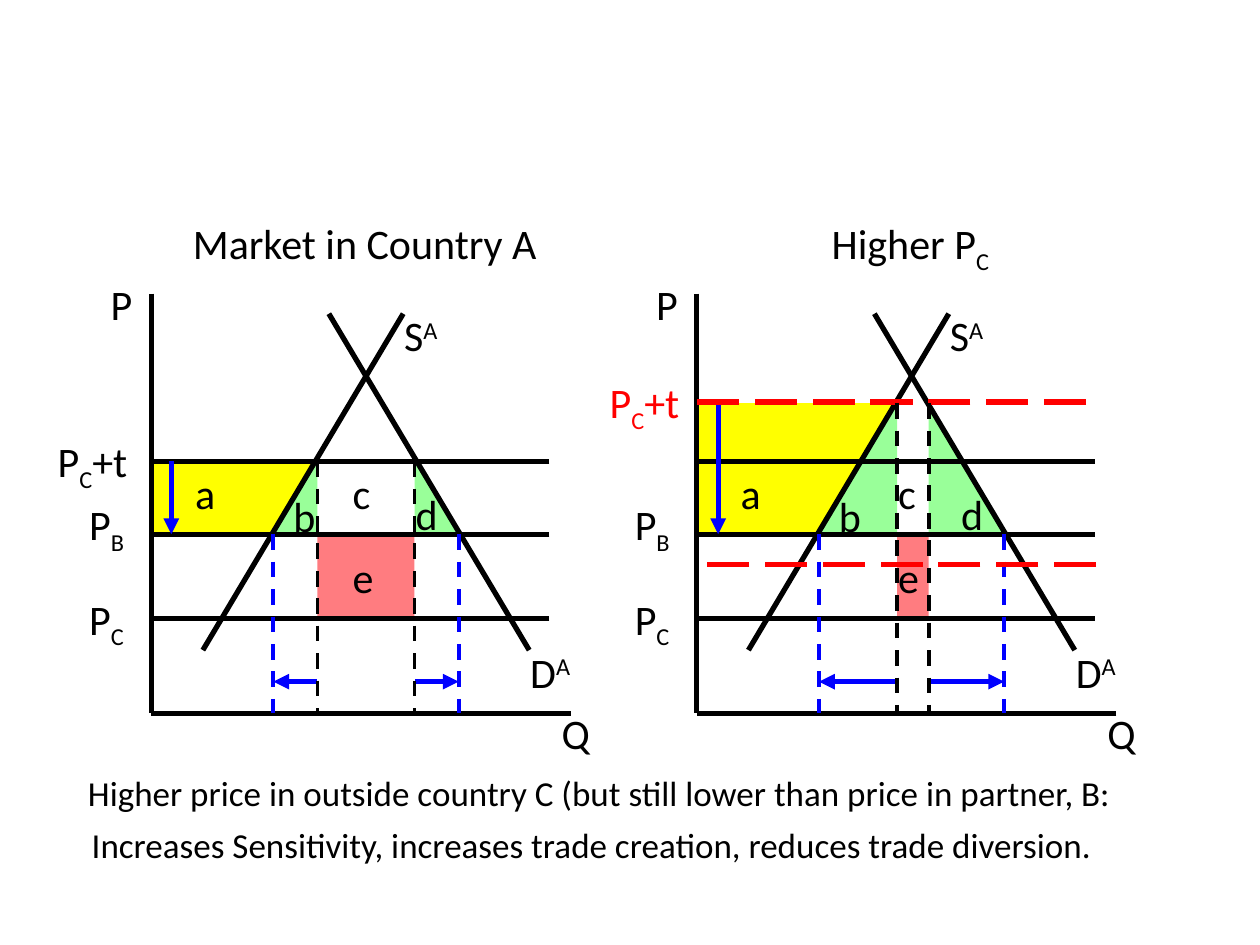
from pptx import Presentation
from pptx.dml.color import RGBColor
from pptx.enum.dml import MSO_LINE
from pptx.enum.shapes import MSO_CONNECTOR, MSO_SHAPE
from pptx.enum.text import MSO_AUTO_SIZE, PP_ALIGN
from pptx.oxml.ns import qn
from pptx.oxml.xmlchemy import OxmlElement
from pptx.util import Inches, Pt

BLACK, BLUE, RED = "000000", "0000FF", "FF0000"
YELLOW, GREEN, PINK = "FFFF00", "99FF99", "FF7C80"
BASELINES = {"_": "-25000", "^": "30000"}

presentation = Presentation()
presentation.slide_width, presentation.slide_height = Inches(10), Inches(7.5)
slide = presentation.slides.add_slide(presentation.slide_layouts[6])
shapes = slide.shapes


def add_text(parts, left, top, width=1, size=24, color=BLACK, align=PP_ALIGN.LEFT):
    """Add a text box; a part that starts with _ is lowered, with ^ raised."""
    box = shapes.add_textbox(Inches(left), Inches(top), Inches(width), Inches(0.5))
    frame = box.text_frame
    frame.word_wrap = True
    frame.auto_size = MSO_AUTO_SIZE.SHAPE_TO_FIT_TEXT
    paragraph = frame.paragraphs[0]
    paragraph.alignment = align
    for part in parts:
        run = paragraph.add_run()
        run.text = part.lstrip("_^")
        run.font.name, run.font.size = "Calibri", Pt(size)
        run.font.color.rgb = RGBColor.from_string(color)
        if part[0] in BASELINES:
            run.font._element.set("baseline", BASELINES[part[0]])


def add_line(x1, y1, x2, y2, color=BLACK, width=3, dash=None, arrow=False):
    """Add a straight line; an arrow has its head at the first point."""
    line = shapes.add_connector(
        MSO_CONNECTOR.STRAIGHT, Inches(x1), Inches(y1), Inches(x2), Inches(y2))
    line.line.color.rgb = RGBColor.from_string(color)
    line.line.width = Pt(width)
    if dash:
        line.line.dash_style = dash
    if arrow:
        head = OxmlElement("a:headEnd")
        head.set("type", "triangle")
        line.line._get_or_add_ln().append(head)
    line._element.spPr.append(OxmlElement("a:effectLst"))


# Prices are heights on the slide, quantities are distances from the price axis
PRICE_B, PRICE_C, OLD_TARIFF_PRICE = 4.24, 4.91, 3.66
AXIS_TOP, AXIS_BOTTOM, ARROW_LEVEL = 2.33, 5.66, 5.41
SUPPLY_B, DEMAND_B = 0.97, 2.44

LABELS = [
    (["Q"], 3.16, 5.57), (["P"], -0.42, 2.16),
    (["P", "_C"], -0.59, 4.66), (["P", "_B"], -0.59, 3.91),
    (["D", "^A"], 2.91, 5.08), (["S", "^A"], 1.91, 2.41),
    (["a"], 0.25, 3.66), (["c"], 1.5, 3.66), (["b"], 1.03, 3.84),
    (["d"], 2, 3.83), (["e"], 1.5, 4.33),
]

# axis, title, tariff price, supply and demand at it, arrow x,
# left and top of the tariff label, its colour
PANELS = [
    (1.2, ["Market in Country A"], 3.66, 1.32, 2.09, 0.16, -0.84, 3.41, BLACK),
    (5.53, ["Higher P", "_C"], 3.2, 1.59, 1.84, 0.17, -0.79, 2.94, RED),
]

for (axis, title, tariff_price, supply, demand, arrow_x,
     label_left, label_top, label_color) in PANELS:
    supply_x, demand_x = axis + supply, axis + demand
    supply_b_x, demand_b_x = axis + SUPPLY_B, axis + DEMAND_B
    height = PRICE_B - tariff_price

    # Welfare areas a, b, d and e
    builder = shapes.build_freeform(Inches(axis), Inches(PRICE_B))
    builder.add_line_segments([
        (Inches(x), Inches(y)) for x, y in
        [(axis, tariff_price), (supply_x, tariff_price), (supply_b_x, PRICE_B)]])
    areas = [(builder.convert_to_shape(), YELLOW)]
    for kind, left, right, top, bottom, color in [
        (MSO_SHAPE.RIGHT_TRIANGLE, supply_b_x, supply_x, tariff_price, PRICE_B, GREEN),
        (MSO_SHAPE.RIGHT_TRIANGLE, demand_x, demand_b_x, tariff_price, PRICE_B, GREEN),
        (MSO_SHAPE.RECTANGLE, supply_x, demand_x, PRICE_B, PRICE_C, PINK),
    ]:
        area = shapes.add_shape(kind, Inches(left), Inches(top),
                                Inches(right - left), Inches(bottom - top))
        areas.append((area, color))
    areas[1][0]._element.spPr.find(qn("a:xfrm")).set("flipH", "1")
    for area, color in areas:
        area.fill.solid()
        area.fill.fore_color.rgb = RGBColor.from_string(color)
        area.line.fill.background()
        area.shadow.inherit = False

    # Axes, supply, demand and price lines
    add_line(axis, AXIS_TOP, axis, AXIS_BOTTOM)
    add_line(axis + 3.33, AXIS_BOTTOM, axis, AXIS_BOTTOM)
    add_line(axis + 2, 2.49, axis + 0.41, 5.16)
    add_line(axis + 1.41, 2.49, axis + 3, 5.16)
    for price in (PRICE_C, PRICE_B, OLD_TARIFF_PRICE):
        add_line(axis + 3.16, price, axis, price)
    for x in (supply_b_x, demand_b_x):
        add_line(x, PRICE_B, x, AXIS_BOTTOM, BLUE, 2.25, MSO_LINE.DASH)

    add_text(title, axis + 0.07, 1.68, width=3.25, align=PP_ALIGN.CENTER)
    for parts, left, top in LABELS:
        add_text(parts, axis + left, top)
    add_text(["P", "_C", "+t"], axis + label_left, label_top, color=label_color)

    # Changes in price and quantities
    add_line(axis + arrow_x, PRICE_B, axis + arrow_x, tariff_price, BLUE, arrow=True)
    add_line(demand_b_x, ARROW_LEVEL, demand_x, ARROW_LEVEL, BLUE, arrow=True)
    add_line(supply_b_x, ARROW_LEVEL, supply_x, ARROW_LEVEL, BLUE, arrow=True)

    if tariff_price != OLD_TARIFF_PRICE:
        for right, price in ((8.7, 4.48), (8.62, 3.19)):
            add_line(right, price, right - 3.17, price, RED, dash=MSO_LINE.LONG_DASH)
    for x in (supply_x, demand_x):
        add_line(x, tariff_price, x, AXIS_BOTTOM, BLACK, 2.25, MSO_LINE.DASH)

add_text(["Higher price in outside country C (but still lower than price in partner, B:"],
         0.6, 6.07, width=8.64, size=20)
add_text(["Increases Sensitivity, increases trade creation, reduces trade diversion."],
         0.63, 6.49, width=8.64, size=20)

presentation.save("out.pptx")
